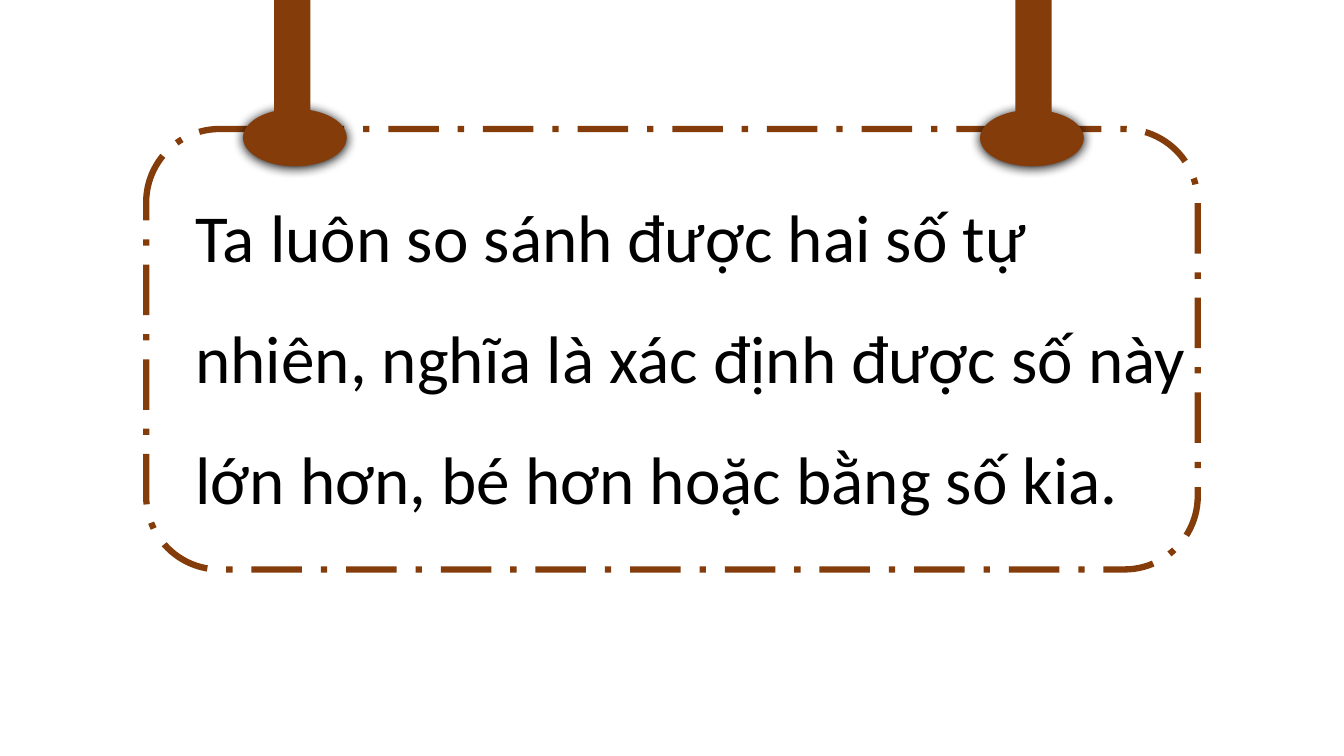
"""Build a slide with a hanging sign that states how two natural numbers compare."""
from lxml import etree
from pptx import Presentation
from pptx.dml.color import RGBColor
from pptx.enum.dml import MSO_LINE
from pptx.enum.shapes import MSO_SHAPE
from pptx.enum.text import MSO_AUTO_SIZE
from pptx.oxml.ns import qn
from pptx.util import Inches, Pt

BROWN = RGBColor(0x84, 0x3C, 0x0B)
WHITE = RGBColor(0xFF, 0xFF, 0xFF)
BLACK = RGBColor(0x00, 0x00, 0x00)
ROUNDED = MSO_SHAPE.ROUNDED_RECTANGLE
OVAL = MSO_SHAPE.OVAL
RECTANGLE = MSO_SHAPE.RECTANGLE
LONG_DASH_DOT = MSO_LINE.LONG_DASH_DOT
FIT_SHAPE = MSO_AUTO_SIZE.SHAPE_TO_FIT_TEXT

RULE = ("Ta luôn so sánh được hai số tự nhiên, nghĩa là xác định được số này "
        "lớn hơn, bé hơn hoặc bằng số kia.")
HANGERS = [
    {"knob": (2.41, 1.08, 1.03, 0.57), "strap": (2.72, 0, 0.36, 1.28)},
    {"knob": (9.72, 1.09, 1.03, 0.56), "strap": (10.07, 0, 0.36, 1.25)},
]


def add_filled(shapes, kind, place, color):
    """Add a plain filled shape without outline or shadow."""
    shape = shapes.add_shape(kind, *[Inches(length) for length in place])
    shape.shadow.inherit = False
    shape.fill.solid()
    shape.fill.fore_color.rgb = color
    shape.line.fill.background()
    return shape


def add_shadow(shape):
    """Give a shape a soft black shadow just below it."""
    effects = shape._element.spPr.find(qn("a:effectLst"))
    shadow = etree.SubElement(effects, qn("a:outerShdw"), blurRad=str(Pt(8.5)),
                              dist=str(Pt(1)), dir="5400000", rotWithShape="0")
    etree.SubElement(shadow, qn("a:srgbClr"), val=str(BLACK))


deck = Presentation()
deck.slide_width, deck.slide_height = Inches(13.33), Inches(7.5)
page = deck.slides.add_slide(deck.slide_layouts[6])

sign = add_filled(page.shapes, ROUNDED, (1.45, 1.28, 10.43, 4.37), WHITE)
sign.line.color.rgb = BROWN
sign.line.width = Pt(4.5)
sign.line.dash_style = LONG_DASH_DOT

box = page.shapes.add_textbox(Inches(1.84), Inches(1.49), Inches(10.04), Inches(3.61))
box.text_frame.word_wrap = True
box.text_frame.auto_size = FIT_SHAPE
para = box.text_frame.paragraphs[0]
para.line_spacing = 1.5
span = para.add_run()
span.text = RULE
for name, value in {"name": "Calibri", "size": Pt(48)}.items():
    setattr(span.font, name, value)
span.font.color.rgb = BLACK

for hanger in HANGERS:
    group = page.shapes.add_group_shape()
    knob = add_filled(group.shapes, OVAL, hanger["knob"], BROWN)
    add_shadow(knob)
    add_filled(group.shapes, RECTANGLE, hanger["strap"], BROWN)

deck.save("out.pptx")
